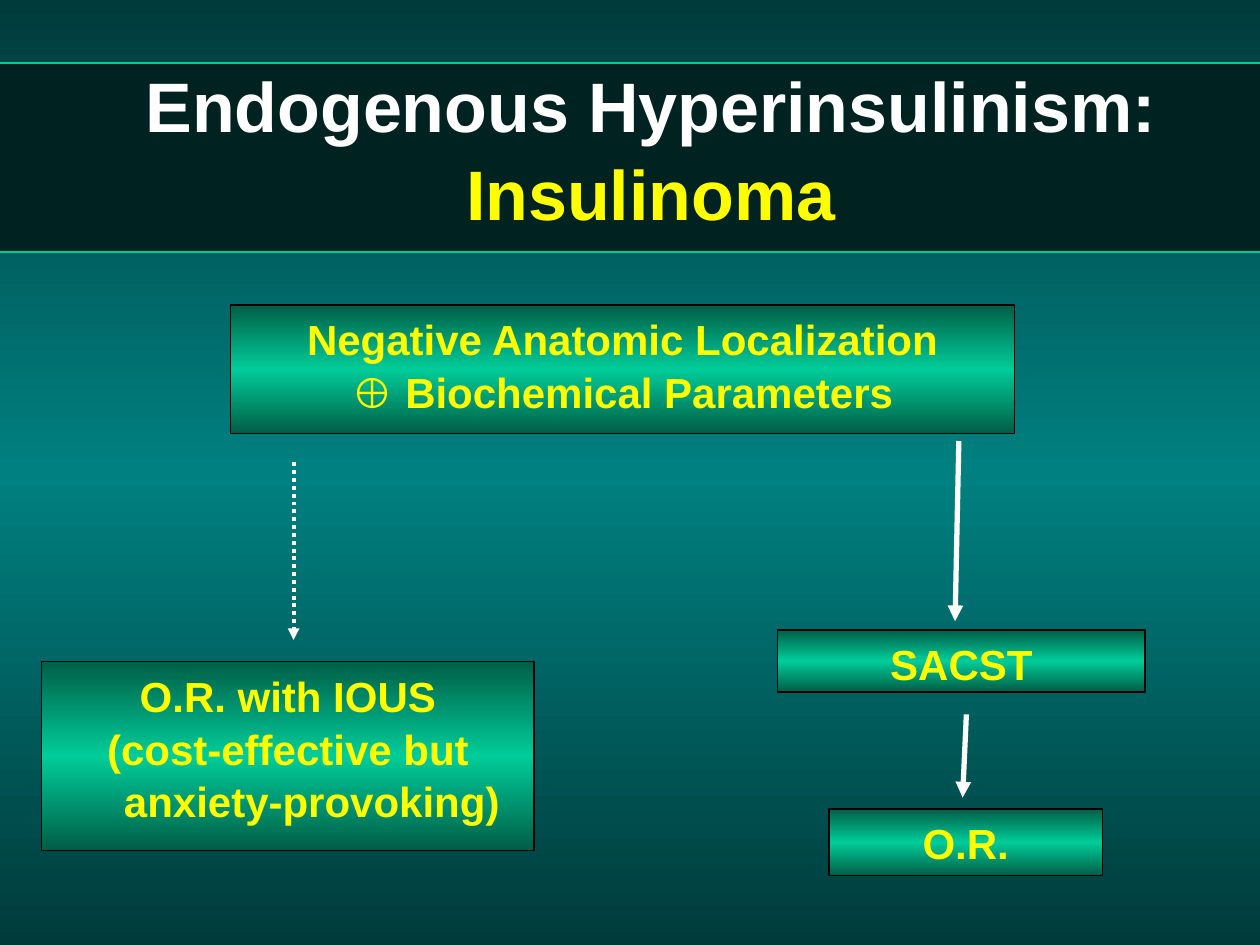
from copy import deepcopy

from lxml import etree
from pptx import Presentation
from pptx import util as u
from pptx.dml.color import RGBColor
from pptx.enum import dml, shapes, text
from pptx.oxml.ns import qn

WHITE = RGBColor(0xFF, 0xFF, 0xFF)
YELLOW = RGBColor(0xFF, 0xFF, 0x00)
BLACK = RGBColor(0x00, 0x00, 0x00)
BAND = RGBColor(0x00, 0x22, 0x21)
GREEN = RGBColor(0x00, 0xCC, 0x99)
DARK_GREEN = RGBColor(0x00, 0x5E, 0x46)
TEAL = RGBColor(0x00, 0x80, 0x80)
DARK_TEAL = RGBColor(0x00, 0x3B, 0x3B)

FONT = "Arial"
LINE_SPACING = 1.05
INDENT = u.Inches(0.38)


def inches(*values):
    return [u.Inches(value) for value in values]


def fill_mirrored(fill, edge, middle):
    """Vertical gradient that runs from edge to middle and back."""
    fill.gradient()
    fill.gradient_angle = 90
    first = fill._fill._gradFill.gsLst[0]
    first.addnext(deepcopy(first))
    colors = (edge, middle, edge)
    for stop, color, position in zip(fill.gradient_stops, colors, (0, 0.5, 1)):
        stop.color.rgb = color
        stop.position = position


def add_run(paragraph, words, size, color):
    run = paragraph.add_run()
    run.text = words
    run.font.name = FONT
    run.font.size = u.Pt(size)
    run.font.bold = True
    run.font.color.rgb = color


def add_rectangle(slide, box, line_color, line_width):
    shape = slide.shapes.add_shape(shapes.MSO_SHAPE.RECTANGLE, *inches(*box))
    shape.shadow.inherit = False
    shape.line.color.rgb = line_color
    shape.line.width = u.Pt(line_width)
    return shape


def add_title(slide, band_box, text_box):
    # Band that bleeds past both slide edges
    band = add_rectangle(slide, band_box, GREEN, 0.75)
    band.fill.solid()
    band.fill.fore_color.rgb = BAND

    # Two-line title
    frame = slide.shapes.add_textbox(*inches(*text_box)).text_frame
    frame.word_wrap = True
    frame.vertical_anchor = text.MSO_ANCHOR.MIDDLE
    paragraph = frame.paragraphs[0]
    paragraph.alignment = text.PP_ALIGN.CENTER
    paragraph.line_spacing = LINE_SPACING
    add_run(paragraph, "Endogenous Hyperinsulinism:", 40, WHITE)
    paragraph.add_line_break()
    add_run(paragraph, "Insulinoma", 40, YELLOW)


def add_step(slide, box, lines, line_width=1):
    shape = add_rectangle(slide, box, BLACK, line_width)
    fill_mirrored(shape.fill, DARK_GREEN, GREEN)
    frame = shape.text_frame
    frame.word_wrap = True
    frame.vertical_anchor = text.MSO_ANCHOR.TOP
    for index, words in enumerate(lines):
        paragraph = frame.add_paragraph() if index else frame.paragraphs[0]
        paragraph.alignment = text.PP_ALIGN.CENTER
        paragraph.line_spacing = LINE_SPACING
        properties = paragraph._p.get_or_add_pPr()
        properties.set("marL", str(INDENT))
        properties.set("indent", str(-INDENT))
        add_run(paragraph, words, 24, YELLOW)


def add_arrow(slide, start, end, width=3, dash=None):
    arrow = slide.shapes.add_connector(
        shapes.MSO_CONNECTOR.STRAIGHT, *inches(*start, *end))
    arrow.line.color.rgb = WHITE
    arrow.line.width = u.Pt(width)
    if dash:
        arrow.line.dash_style = dash
    line = arrow.line._get_or_add_ln()
    etree.SubElement(line, qn("a:tailEnd"), type="triangle")
    etree.SubElement(arrow._element.spPr, qn("a:effectLst"))


def add_flowchart(slide):
    # Steps
    add_step(slide, (1.83, 2.42, 6.22, 1.02),
             ["Negative Anatomic Localization", "⊕ Biochemical Parameters"], 0.75)
    add_step(slide, (0.33, 5.25, 3.91, 1.5),
             ["O.R. with IOUS", "(cost-effective but anxiety-provoking)"])
    add_step(slide, (6.17, 5, 2.92, 0.49), ["SACST"])
    add_step(slide, (6.58, 6.42, 2.17, 0.53), ["O.R."])

    # Arrows between the steps
    add_arrow(slide, (2.33, 3.67), (2.33, 5.08), 2.25, dml.MSO_LINE.ROUND_DOT)
    add_arrow(slide, (7.61, 3.5), (7.58, 4.93))
    add_arrow(slide, (7.67, 5.67), (7.64, 6.33))


def main():
    presentation = Presentation()
    presentation.slide_width, presentation.slide_height = inches(10, 7.5)
    slide = presentation.slides.add_slide(presentation.slide_layouts[6])
    fill_mirrored(slide.background.fill, DARK_TEAL, TEAL)
    add_title(slide, (-0.58, 0.5, 11.08, 1.5), (0, 0.5, 10.33, 1.33))
    add_flowchart(slide)
    presentation.save("out.pptx")


if __name__ == "__main__":
    main()
